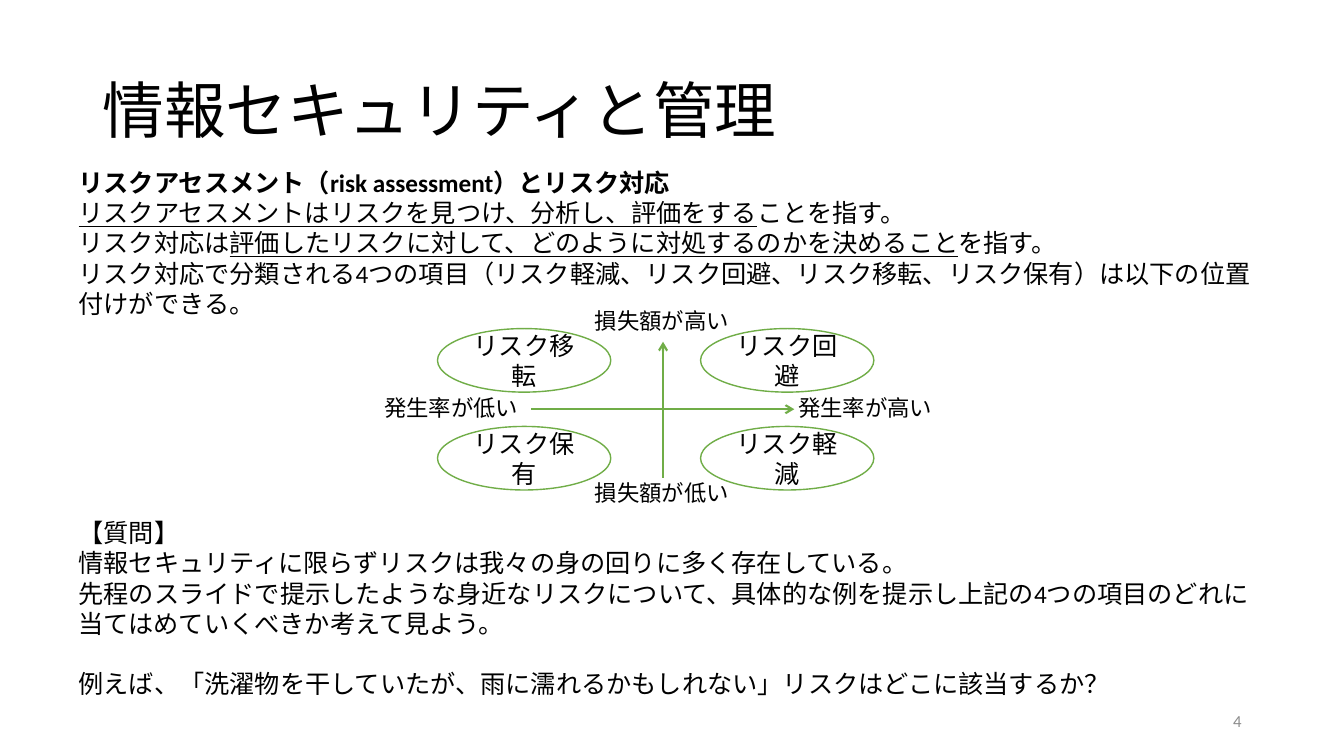
"""Build the risk assessment slide with its four-quadrant risk response map."""
import pptx
import pptx.dml.color
import pptx.enum.shapes
import pptx.enum.text
import pptx.oxml
import pptx.oxml.ns
import pptx.util

Pt = pptx.util.Pt
Align = pptx.enum.text.PP_ALIGN
Anchor = pptx.enum.text.MSO_ANCHOR
Color = pptx.dml.color.RGBColor.from_string

THEME = {
    "font": "Calibri",
    "text": Color("000000"),
    "muted": Color("8C8C8C"),
    "paper": Color("FFFFFF"),
    "green": Color("70AD47"),
    "title": Pt(44),
    "body": Pt(18),
    "label": Pt(16),
    "number": Pt(12),
}


def write(shape, paragraphs, size, align=Align.LEFT, anchor=Anchor.TOP, color="text"):
    """Fill a shape with paragraphs made of (text, font settings) spans."""
    frame = shape.text_frame
    frame.word_wrap = True
    frame.auto_size = pptx.enum.text.MSO_AUTO_SIZE.NONE
    frame.vertical_anchor = anchor
    for index, spans in enumerate(paragraphs):
        para = frame.add_paragraph() if index else frame.paragraphs[0]
        para.alignment = align
        for text, settings in spans:
            span = para.add_run()
            span.text = text
            span.font.color.rgb = THEME[color]
            formats = {"name": THEME["font"], "size": THEME[size], **settings}
            for name, value in formats.items():
                setattr(span.font, name, value)
    return frame


def add_text(page, bounds, paragraphs, size, **options):
    """Add a text box at the given bounds in points."""
    box = page.shapes.add_textbox(*map(Pt, bounds))
    return write(box, paragraphs, size, **options)


deck = pptx.Presentation()
deck.slide_width, deck.slide_height = Pt(960), Pt(540)
page = deck.slides.add_slide(deck.slide_layouts[5])

title = page.shapes.title
title.left, title.top, title.width, title.height = map(Pt, (66, 28.8, 828, 104.4))
heading = write(title, [[("情報セキュリティと管理", {})]], "title", anchor=Anchor.MIDDLE)
heading.paragraphs[0].line_spacing = 0.9

add_text(page, (678, 500.4, 216, 28.8), [[("4", {})]], "number",
         align=Align.RIGHT, anchor=Anchor.MIDDLE, color="muted")

bold, underline = {"bold": True}, {"underline": True}
explanation = [
    [("リスクアセスメント（risk assessment）とリスク対応", bold)],
    [("リスクアセスメントはリスクを見つけ、分析し、評価をする", underline),
     ("ことを指す。", {})],
    [("リスク対応は", {}),
     ("評価したリスクに対して、どのように対処するのかを決めること", underline),
     ("を指す。", {})],
    [("リスク対応で分類される4つの項目（リスク軽減、リスク回避、リスク移転、リスク保有）"
      "は以下の位置付けができる。", {})],
]
add_text(page, (49, 116, 863, 94), explanation, "body")

question = [
    [("【質問】", {})],
    [("情報セキュリティに限らずリスクは我々の身の回りに多く存在している。", {})],
    [("先程のスライドで提示したような身近なリスクについて、具体的な例を提示し"
      "上記の4つの項目のどれに当てはめていくべきか考えて見よう。", {})],
    [("例えば、「洗濯物を干していたが、雨に濡れるかもしれない」"
      "リスクはどこに該当するか？", {})],
]
frame = add_text(page, (49, 366, 863, 138), question, "body")
frame.paragraphs[-1].space_before = Pt(21.6)

axes = [(379.4, 292.3, 567.4, 292.3), (473.6, 341.3, 473.6, 244.1)]
for ends in axes:
    axis = page.shapes.add_connector(
        pptx.enum.shapes.MSO_CONNECTOR.STRAIGHT, *map(Pt, ends))
    axis.line.color.rgb = THEME["green"]
    axis.line.width = Pt(1.5)
    arrow = pptx.oxml.parse_xml(
        f'<a:tailEnd {pptx.oxml.ns.nsdecls("a")} type="arrow"/>')
    axis.line._get_or_add_ln().append(arrow)
    axis._element.spPr.append(
        pptx.oxml.parse_xml(f'<a:effectLst {pptx.oxml.ns.nsdecls("a")}/>'))

axis_labels = [
    ("損失額が高い", 391.7, 216, 162),
    ("損失額が低い", 391.7, 338.4, 162),
    ("発生率が高い", 558.7, 277.9, 118.8),
    ("発生率が低い", 262.8, 277.9, 118.8),
]
for text, left, top, width in axis_labels:
    add_text(page, (left, top, width, 26.6), [[(text, {})]], "label", align=Align.CENTER)

responses = [["リスク移転", "リスク回避"], ["リスク保有", "リスク軽減"]]
for row, names in enumerate(responses):
    for column, name in enumerate(names):
        bounds = (312.5 + 187.9 * column, 234.7 + 69.9 * row, 123.8, 45.4)
        oval = page.shapes.add_shape(
            pptx.enum.shapes.MSO_SHAPE.OVAL, *map(Pt, bounds))
        oval.shadow.inherit = False
        oval.fill.solid()
        oval.fill.fore_color.rgb = THEME["paper"]
        oval.line.color.rgb = THEME["green"]
        oval.line.width = Pt(1)
        frame = write(oval, [[(name, {})]], "body", align=Align.CENTER, anchor=Anchor.MIDDLE)
        for side in ("left", "top", "right", "bottom"):
            setattr(frame, f"margin_{side}", 0)

deck.save("out.pptx")
